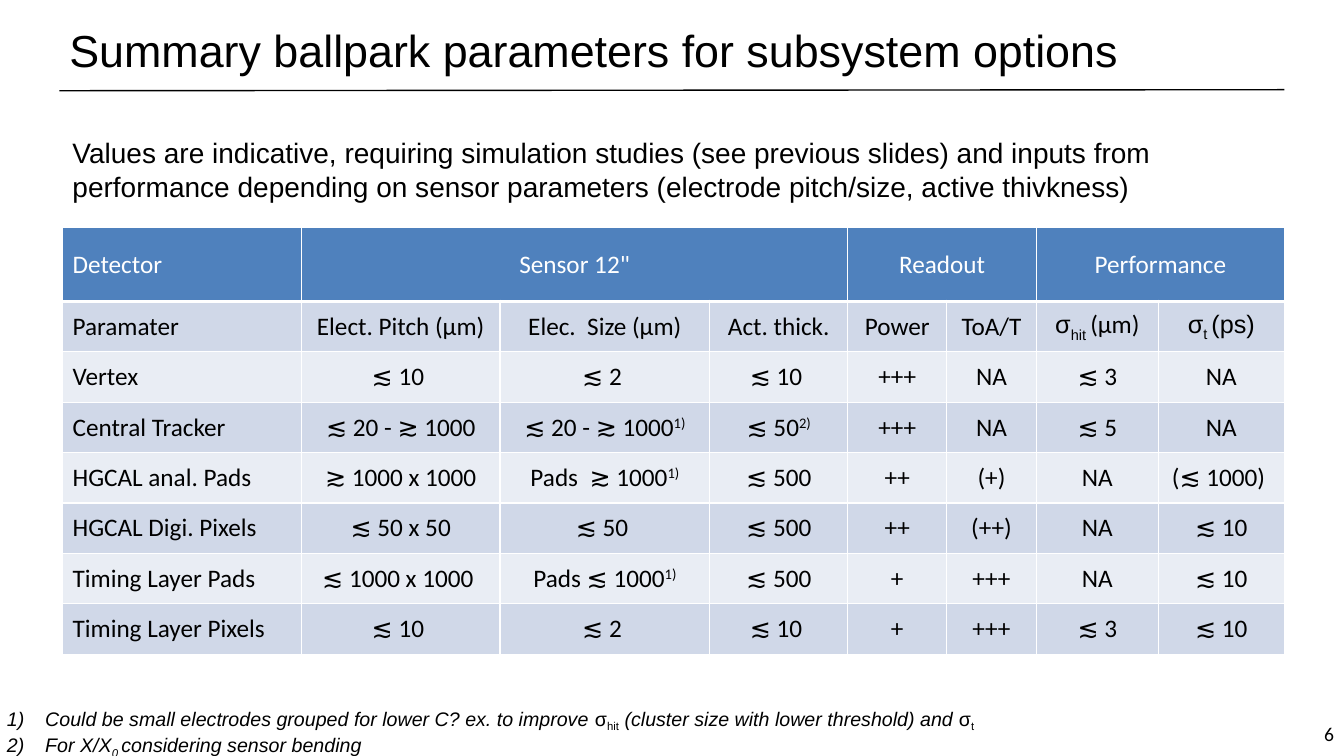
from pptx import Presentation, util as u
from pptx.dml.color import RGBColor
from pptx.enum import shapes, text
from pptx.oxml import parse_xml
from pptx.oxml.ns import nsdecls
from lxml import etree

SCALE = 9144
BLACK, WHITE, BLUE = "000000", "FFFFFF", "4F81BD"
BANDS = ["D0D8E8", "E9EDF4"]
LEFT, MID, RIGHT = text.PP_ALIGN.LEFT, text.PP_ALIGN.CENTER, text.PP_ALIGN.RIGHT
COLS = [237, 197, 208, 137, 98, 89, 121, 125]
ROWS = [73] + [50] * 7
SUB, SUP = {"base": -25}, {"base": 30}
ARIAL, PLAIN = {"face": "Arial"}, {"ital": False}
SMALL = {"base": -25, "face": "Arial"}
HEADS = [(0, 1, "Detector"), (1, 3, 'Sensor 12"'), (4, 2, "Readout"), (6, 2, "Performance")]
DATA = [
    ["Paramater", "Elect. Pitch (μm)", "Elec.  Size (μm)", "Act. thick.", "Power", "ToA/T",
     [("σ", ARIAL), ("hit ", SMALL), ("(μm)", {})],
     [("σ", ARIAL), ("t ", SMALL), ("(ps)", ARIAL)]],
    ["Vertex", "≲ 10 ", "≲ 2 ", "≲ 10 ", "+++", "NA", "≲ 3", "NA"],
    ["Central Tracker", "≲ 20 - ≳ 1000", [("≲ 20 - ≳ 1000", {}), ("1)", SUP)],
     [("≲ 50", {}), ("2)", SUP)], "+++", "NA", "≲ 5", "NA"],
    ["HGCAL anal. Pads", "≳ 1000 x 1000", [("Pads  ≳ 1000", {}), ("1)", SUP)],
     "≲ 500", "++", "(+)", "NA", "(≲ 1000) "],
    ["HGCAL Digi. Pixels", "≲ 50 x 50", "≲ 50 ", "≲ 500", "++", "(++)", "NA", "≲ 10"],
    ["Timing Layer Pads", "≲ 1000 x 1000 ", [("Pads ≲ 1000", {}), ("1)", SUP)],
     "≲ 500", "+", "+++", "NA", "≲ 10"],
    ["Timing Layer Pixels", "≲ 10 ", "≲ 2 ", "≲ 10 ", "+", "+++", "≲ 3", "≲ 10"],
]
NOTES = [
    [("Could be small electrodes grouped for lower C? ex. to improve ", {}), ("σ", PLAIN),
     ("hit", {"base": -25, "ital": False}), (" (cluster size with lower threshold) and ", {}),
     ("σ", PLAIN), ("t", {"base": -25, "ital": False})],
    [("For X/X", {}), ("0 ", SUB), ("considering sensor bending", {})],
]


def px(num):
    """Turn px into EMU."""
    return u.Emu(num * SCALE)


def ink(code):
    """Turn a hex string into a colour."""
    return RGBColor.from_string(code)


def style(run, size, face, hue, ital=False, base=0):
    """Format one run, raised or lowered by base percent."""
    font = run.font
    font.size, font.name, font.italic = u.Pt(size), face, ital
    font.color.rgb = ink(hue)
    if base:
        run._r.get_or_add_rPr().set("baseline", str(base * 1000))


def write(par, parts, align=LEFT, **look):
    """Fill a paragraph with a string or with styled parts."""
    par.alignment = align
    if isinstance(parts, str):
        par.text = parts
        style(par.runs[0], **look)
        return
    for words, extra in parts:
        run = par.add_run()
        run.text = words
        style(run, **{**look, **extra})


def add_box(slide, area, paras, align=LEFT, anchor=text.MSO_ANCHOR.TOP, **look):
    """Add a text box and return its paragraphs."""
    frame = slide.shapes.add_textbox(*map(px, area)).text_frame
    frame.word_wrap, frame.vertical_anchor = True, anchor
    for num, parts in enumerate(paras):
        par = frame.add_paragraph() if num else frame.paragraphs[0]
        write(par, parts, align, hue=BLACK, **look)
    return frame.paragraphs


def number(par):
    """Give a paragraph automatic numbering."""
    prop = par._p.get_or_add_pPr()
    prop.set("marL", str(px(38)))
    prop.set("indent", str(px(-38)))
    prop.append(parse_xml(f'<a:buAutoNum {nsdecls("a")} type="arabicParenR"/>'))


def add_rule(slide, ends):
    """Add a thin black line."""
    line = slide.shapes.add_connector(shapes.MSO_CONNECTOR.STRAIGHT, *map(px, ends))
    line.line.color.rgb, line.line.width = ink(BLACK), u.Pt(1)
    line._element.spPr.append(parse_xml(f'<a:effectLst {nsdecls("a")}/>'))


def paint(cell, hue, top, bottom):
    """Fill a cell and give it white borders."""
    prop = cell._tc.get_or_add_tcPr()
    for side, width in zip("LRTB", (1, 1, top, bottom)):
        prop.append(parse_xml(
            f'<a:ln{side} {nsdecls("a")} w="{u.Pt(width)}"><a:solidFill>'
            f'<a:srgbClr val="{WHITE}"/></a:solidFill></a:ln{side}>'))
    cell.fill.solid()
    cell.fill.fore_color.rgb = ink(hue)
    cell.vertical_anchor = text.MSO_ANCHOR.MIDDLE


def add_grid(slide):
    """Add the table of detector parameters."""
    area = map(px, (62, 226, sum(COLS), sum(ROWS)))
    grid = slide.shapes.add_table(len(ROWS), len(COLS), *area).table
    grid.first_row = grid.horz_banding = False
    for col, wide in zip(grid.columns, COLS):
        col.width = px(wide)
    for row, high in zip(grid.rows, ROWS):
        row.height = px(high)
    for cell in grid.rows[0].cells:
        paint(cell, BLUE, 1, 3)
    for col, span, head in HEADS:
        cell = grid.cell(0, col)
        if span > 1:
            cell.merge(grid.cell(0, col + span - 1))
        write(cell.text_frame.paragraphs[0], head, MID if col else LEFT,
              size=18, face="Calibri", hue=WHITE)
    for row, items in enumerate(DATA, 1):
        for col, item in enumerate(items):
            cell = grid.cell(row, col)
            paint(cell, BANDS[(row - 1) % 2], 3 if row == 1 else 1, 1)
            write(cell.text_frame.paragraphs[0], item, MID if col else LEFT,
                  size=18, face="Calibri", hue=BLACK)


def main():
    """Build and save the slide."""
    deck = Presentation()
    deck.slide_width, deck.slide_height = px(1333), px(750)
    slide = deck.slides.add_slide(deck.slide_layouts[6])
    add_box(slide, (1187, 708, 146, 40), ["6"], RIGHT, text.MSO_ANCHOR.MIDDLE,
            size=14, face="Calibri")
    add_box(slide, (59, 18, 1160, 64), ["Summary ballpark parameters for subsystem options"],
            size=32, face="Arial")
    add_rule(slide, (59, 90, 1274, 89))
    add_grid(slide)
    for par in add_box(slide, (-3, 696, 1015, 57), NOTES, size=14, face="Arial", ital=True):
        number(par)
    add_box(slide, (62, 130, 1215, 77), [
        "Values are indicative, requiring simulation studies (see previous slides) and inputs "
        "from performance depending on sensor parameters (electrode pitch/size, active thivkness)"],
        size=20, face="Arial")
    deck.save("out.pptx")


if __name__ == "__main__":
    main()
